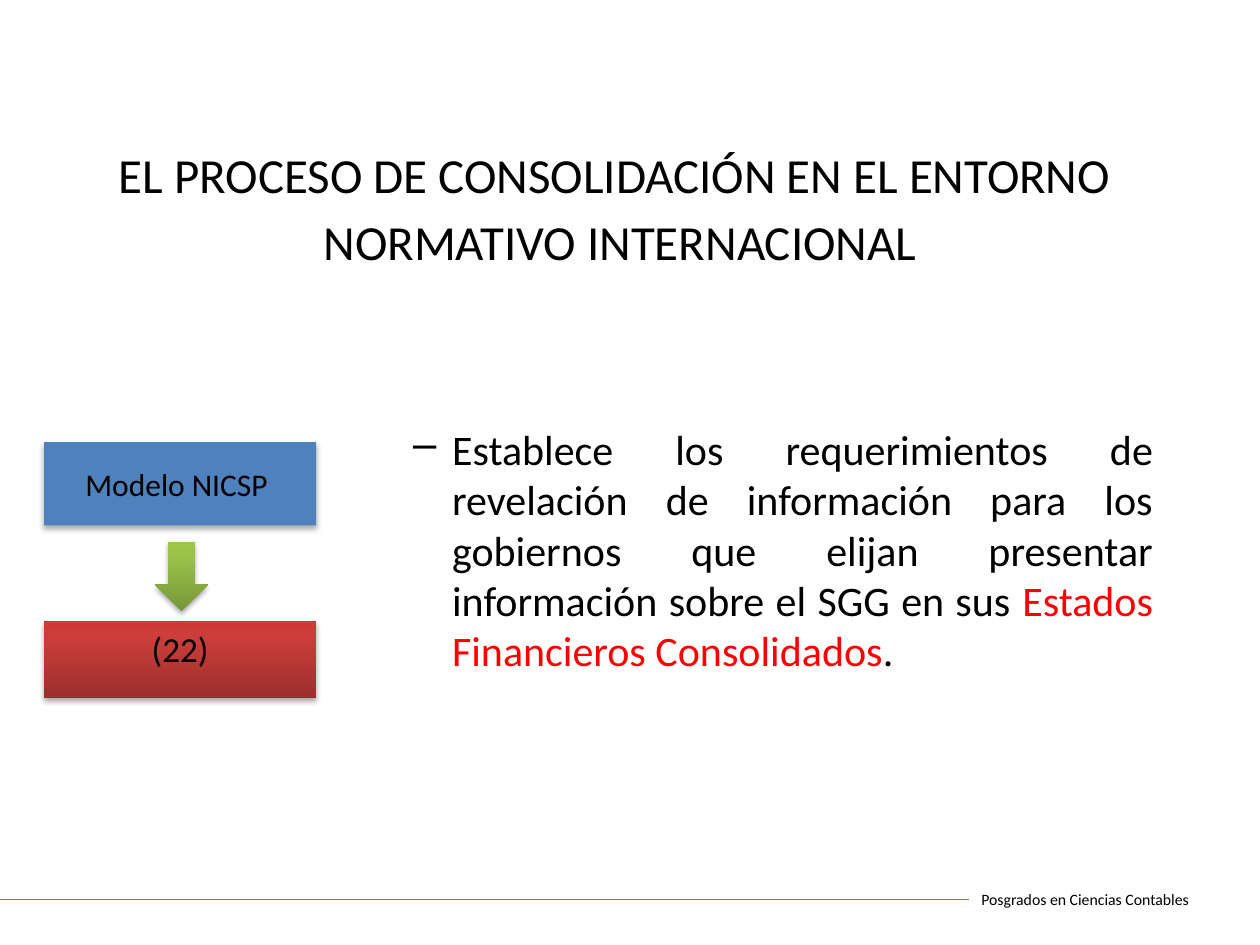
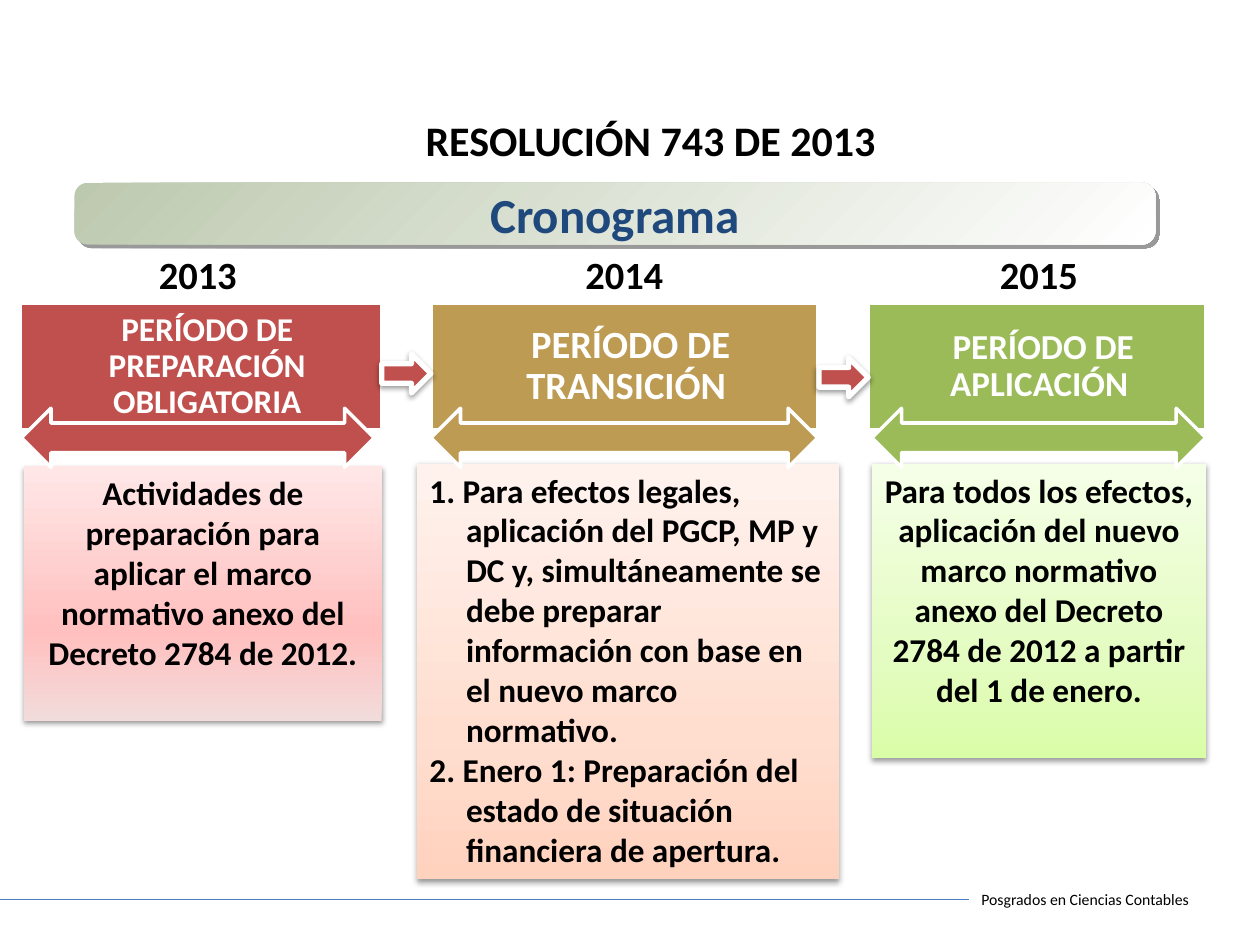
from dataclasses import dataclass

from lxml import etree
from pptx import Presentation
from pptx import util as u
from pptx.dml.color import RGBColor
from pptx.enum import shapes, text
from pptx.oxml.ns import qn

FONT = "Calibri"
BLACK = RGBColor(0x00, 0x00, 0x00)
WHITE = RGBColor(0xFF, 0xFF, 0xFF)
RED = RGBColor(0xFF, 0x00, 0x00)
NAVY = RGBColor(0x1F, 0x49, 0x7D)
BLUE = RGBColor(0x4F, 0x81, 0xBD)
RULE_BLUE = RGBColor(0x4B, 0x7E, 0xBC)
BRICK = RGBColor(0xC0, 0x50, 0x4D)
OCHRE = RGBColor(0xBD, 0x9B, 0x53)
GREEN = RGBColor(0x9B, 0xBB, 0x59)


def ramp(*stops):
    return [(position, RGBColor.from_string(code)) for position, code in stops]


RED_RAMP = ramp((0, "9C2F2D"), (80, "CB3E3A"), (100, "CE3B37"))
GREEN_RAMP = ramp((0, "779737"), (80, "9BC348"), (100, "9DC746"))
SAGE_RAMP = ramp((0, "BDC9AF"), (100, "FFFFFF"))
PINK_RAMP = ramp((0, "F2DCDB"), (35, "FFC0BF"), (100, "FFE7E7"))
PEACH_RAMP = ramp((0, "FFD2BD"), (35, "FFDED0"), (100, "FFF2ED"))
LIME_RAMP = ramp((0, "DAFDA7"), (35, "E4FCC2"), (100, "F5FFE7"))

DEEP_SHADOW = (35, 3.1, 1.8, 90)
MODEL_SHADOW = (32, 3.5, 2.2, 90)
SOFT_SHADOW = (38, 3.1, 1.6, 90)
BANNER_SHADOW = (40, 0, 3, 45)

SHAPE = shapes.MSO_SHAPE
ALIGN = text.PP_ALIGN
ANCHOR = text.MSO_ANCHOR


@dataclass
class Period:
    year: str
    name: str
    name_size: int
    color: RGBColor
    head: tuple
    span: tuple
    detail_at: tuple
    detail_ramp: list
    details: list
    hanging: float = 0


PERIODS = [
    Period("2013", "PERÍODO DE PREPARACIÓN OBLIGATORIA", 19, BRICK,
           (0.16, 2.87), (0.17, 2.8), (0.19, 3.7, 2.84, 2.02), PINK_RAMP,
           ["Actividades de preparación para aplicar el marco normativo "
            "anexo del Decreto 2784 de 2012."]),
    Period("2014", "PERÍODO DE TRANSICIÓN ", 22, OCHRE,
           (3.42, 3.07), (3.42, 3.07), (3.31, 3.68, 3.35, 3.3), PEACH_RAMP,
           ["1. Para efectos legales, aplicación del PGCP, MP y DC y, "
            "simultáneamente se debe preparar información con base en el "
            "nuevo marco normativo.",
            "2. Enero 1: Preparación del estado de situación financiera "
            "de apertura."], 0.29),
    Period("2015", "PERÍODO DE APLICACIÓN ", 20, GREEN,
           (6.89, 2.68), (6.92, 2.65), (6.92, 3.68, 2.65, 2.34), LIME_RAMP,
           ["Para todos los efectos, aplicación del nuevo marco normativo "
            "anexo del Decreto 2784 de 2012 a partir del 1 de enero."]),
]


def inches(box):
    return [u.Inches(length) for length in box]


def paint_gradient(shape, stops, angle):
    shape.fill.gradient()
    shape.fill.gradient_angle = angle
    stop_list = shape._element.spPr.find(".//" + qn("a:gsLst"))
    for old_stop in list(stop_list):
        stop_list.remove(old_stop)
    for position, color in stops:
        stop = etree.SubElement(stop_list, qn("a:gs"), pos=str(position * 1000))
        etree.SubElement(stop, qn("a:srgbClr"), val=str(color))


def cast_shadow(shape, alpha, blur, distance, direction):
    effects = shape._element.spPr.find(qn("a:effectLst"))
    shadow = etree.SubElement(
        effects, qn("a:outerShdw"), blurRad=str(u.Pt(blur)),
        dist=str(u.Pt(distance)), dir=str(direction * 60000), rotWithShape="0")
    tone = etree.SubElement(shadow, qn("a:srgbClr"), val=str(BLACK))
    etree.SubElement(tone, qn("a:alpha"), val=str(alpha * 1000))


def add_block(slide, kind, box, fill, outline=0, shadow=None, angle=90):
    block = slide.shapes.add_shape(kind, *inches(box))
    block.shadow.inherit = False
    if isinstance(fill, list):
        paint_gradient(block, fill, angle)
    else:
        block.fill.solid()
        block.fill.fore_color.rgb = fill
    if outline:
        block.line.color.rgb = WHITE
        block.line.width = u.Pt(outline)
    else:
        block.line.fill.background()
    if shadow:
        cast_shadow(block, *shadow)
    return block


def write(shape, lines, size, color=BLACK, bold=False, align=ALIGN.CENTER,
          anchor=ANCHOR.TOP, hanging=0, gap=0, wrap=True):
    frame = shape.text_frame
    frame.word_wrap = wrap
    frame.vertical_anchor = anchor
    for index, line in enumerate(lines):
        paragraph = frame.paragraphs[0] if index == 0 else frame.add_paragraph()
        paragraph.text = line
        paragraph.alignment = align
        if index and gap:
            paragraph.space_before = u.Pt(gap)
        if hanging:
            indent(paragraph, hanging, -hanging)
        style(paragraph, size, color, bold)
    return frame


def style(paragraph, size, color=BLACK, bold=False):
    paragraph.font.name = FONT
    paragraph.font.size = u.Pt(size)
    paragraph.font.bold = bold
    paragraph.font.color.rgb = color


def indent(paragraph, left, first):
    properties = paragraph._p.get_or_add_pPr()
    properties.set("marL", str(u.Inches(left)))
    properties.set("indent", str(u.Inches(first)))
    return properties


def add_label(slide, box, lines, size, **options):
    label = slide.shapes.add_textbox(*inches(box))
    write(label, lines, size, **options)
    return label


def add_footer(slide):
    add_label(slide, (7.69, 7.01, 1.87, 0.25), ["Posgrados en Ciencias Contables"],
              9, align=ALIGN.LEFT, wrap=False)
    rule = slide.shapes.add_connector(
        shapes.MSO_CONNECTOR.STRAIGHT, *inches((0, 7.14, 7.69, 7.14)))
    rule.line.color.rgb = RULE_BLUE
    rule.line.width = u.Pt(0.75)
    etree.SubElement(rule._element.spPr, qn("a:effectLst"))


def add_requirement(slide):
    requirement = slide.shapes.add_textbox(*inches((2.68, 3.31, 6.57, 0.94)))
    requirement.text_frame.word_wrap = True
    paragraph = requirement.text_frame.paragraphs[0]
    paragraph.alignment = ALIGN.JUSTIFY
    properties = indent(paragraph, 0.81, -0.31)
    etree.SubElement(properties, qn("a:buChar"), char="–")
    style(paragraph, 24)
    for words, color in (
        ("Establece los requerimientos de revelación de información para los "
         "gobiernos que elijan presentar información sobre el SGG en sus ", BLACK),
        ("Estados Financieros Consolidados", RED),
        (". ", BLACK),
    ):
        run = paragraph.add_run()
        run.text = words
        run.font.color.rgb = color


def build_consolidation(slide):
    add_label(slide, (0.31, 1.1, 9.22, 0.94),
              ["EL PROCESO DE CONSOLIDACIÓN EN EL ENTORNO ",
               "NORMATIVO INTERNACIONAL"], 28, hanging=0.38, gap=4.5)
    add_requirement(slide)
    standard = add_block(slide, SHAPE.RECTANGLE, (0.35, 4.93, 2.16, 0.61),
                         RED_RAMP, shadow=DEEP_SHADOW)
    write(standard, ["(22)"], 20)
    model = add_block(slide, SHAPE.RECTANGLE, (0.35, 3.51, 2.16, 0.66),
                      BLUE, shadow=MODEL_SHADOW)
    write(model, ["Modelo NICSP "], 18, anchor=ANCHOR.MIDDLE)
    add_block(slide, SHAPE.DOWN_ARROW, (1.23, 4.3, 0.42, 0.55),
              GREEN_RAMP, shadow=DEEP_SHADOW)


def add_period(slide, period):
    left, width = period.head
    head = add_block(slide, SHAPE.RECTANGLE, (left, 2.41, width, 1),
                     period.color, outline=2)
    frame = write(head, [period.name], period.name_size, WHITE, True,
                  anchor=ANCHOR.MIDDLE)
    frame.margin_left, frame.margin_right = inches((0.62, 0.52))
    frame.paragraphs[0].line_spacing = 0.9

    left, width = period.span
    add_label(slide, (left, 1.94, width, 0.47), [period.year], 22, bold=True)
    detail = add_block(slide, SHAPE.RECTANGLE, period.detail_at,
                       period.detail_ramp, shadow=SOFT_SHADOW)
    write(detail, period.details, 19, bold=True, hanging=period.hanging,
          align=ALIGN.LEFT if period.hanging else ALIGN.CENTER)
    add_block(slide, SHAPE.LEFT_RIGHT_ARROW, (left, 3.24, width, 0.47),
              period.color, outline=2)


def build_schedule(slide):
    banner = add_block(slide, SHAPE.ROUNDED_RECTANGLE, (0.59, 1.45, 8.58, 0.49),
                       SAGE_RAMP, shadow=BANNER_SHADOW, angle=315)
    banner.adjustments[0] = 0.22
    write(banner, ["Cronograma"], 28, NAVY, True, anchor=ANCHOR.MIDDLE)
    for period in PERIODS:
        add_period(slide, period)
    for left, top in ((3.03, 2.81), (6.5, 2.84)):
        add_block(slide, SHAPE.RIGHT_ARROW, (left, top, 0.39, 0.31), BRICK,
                  outline=3, shadow=SOFT_SHADOW)
    add_label(slide, (3.28, 0.86, 3.8, 0.5), ["RESOLUCIÓN 743 DE 2013"], 24,
              bold=True, align=ALIGN.LEFT, wrap=False)


def main():
    deck = Presentation()
    deck.slide_width, deck.slide_height = inches((10, 7.5))
    blank = deck.slide_layouts[6]
    for build in (build_consolidation, build_schedule):
        slide = deck.slides.add_slide(blank)
        add_footer(slide)
        build(slide)
    deck.save("out.pptx")


if __name__ == "__main__":
    main()
